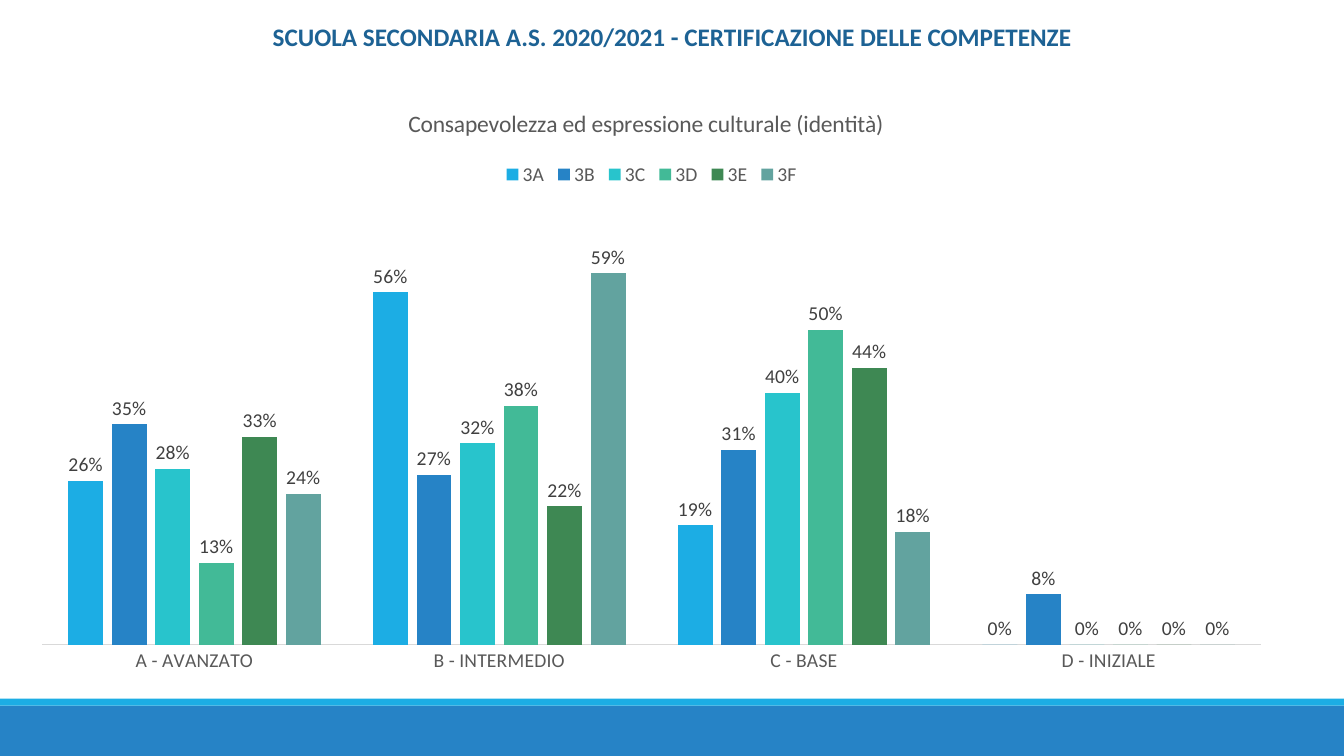
from pptx import Presentation
from pptx.chart.data import CategoryChartData
from pptx.dml.color import RGBColor
from pptx.enum.chart import XL_CHART_TYPE, XL_LABEL_POSITION, XL_LEGEND_POSITION, XL_TICK_MARK
from pptx.enum.shapes import MSO_SHAPE
from pptx.enum.text import PP_ALIGN
from pptx.oxml import parse_xml
from pptx.oxml.ns import nsdecls
from pptx.util import Pt

FONT = "Calibri"
COLORS = {
    "heading": "1D6294", "footer": "2683C6", "stripe": "1CADE4",
    "text": "595959", "label": "404040", "axis": "D9D9D9",
    "3A": "1CADE4", "3B": "2683C6", "3C": "28C4CC",
    "3D": "42BA97", "3E": "3E8853", "3F": "62A39F",
}
LEVELS = ["A - AVANZATO", "B - INTERMEDIO", "C - BASE", "D - INIZIALE"]
CLASSES = {
    "3A": (0.26, 0.56, 0.19, 0),
    "3B": (0.35, 0.27, 0.31, 0.08),
    "3C": (0.28, 0.32, 0.40, 0),
    "3D": (0.13, 0.38, 0.50, 0),
    "3E": (0.33, 0.22, 0.44, 0),
    "3F": (0.24, 0.59, 0.18, 0),
}


def rgb(name):
    return RGBColor.from_string(COLORS[name])


def style_font(font, size=14, color="text", bold=False):
    font.name = FONT
    font.size = Pt(size)
    font.bold = bold
    font.color.rgb = rgb(color)


def write_text(tf, text, align=PP_ALIGN.CENTER, **fmt):
    p = tf.paragraphs[0]
    p.alignment = align
    r = p.add_run()
    r.text = text
    style_font(r.font, **fmt)


def set_layout(element, index, inner=False, **box):
    for old in element.xpath("c:layout"):
        element.remove(old)
    target = '<c:layoutTarget val="inner"/>' if inner else ""
    modes = "".join(f'<c:{k}Mode val="edge"/>' for k in ("x", "y"))
    sizes = "".join(f'<c:{k} val="{v}"/>' for k, v in box.items())
    element.insert(index, parse_xml(
        f'<c:layout {nsdecls("c")}><c:manualLayout>{target}{modes}{sizes}'
        "</c:manualLayout></c:layout>"))


def add_heading(s, x, y, w, h):
    tf = s.shapes.add_textbox(Pt(x), Pt(y), Pt(w), Pt(h)).text_frame
    tf.word_wrap = True
    write_text(tf, "SCUOLA SECONDARIA A.S. 2020/2021 - CERTIFICAZIONE DELLE COMPETENZE",
               size=18, color="heading", bold=True)


def add_footer(s, x, y, w, h):
    stripe = 5
    for color, top, height in (("footer", y + stripe, h - stripe), ("stripe", y, stripe)):
        sp = s.shapes.add_shape(MSO_SHAPE.RECTANGLE, Pt(x), Pt(top), Pt(w), Pt(height))
        sp.shadow.inherit = False
        sp.fill.solid()
        sp.fill.fore_color.rgb = rgb(color)
        sp.line.fill.background()


def add_results_chart(s, x, y, w, h):
    data = CategoryChartData(number_format="0%")
    data.categories = LEVELS
    for name, values in CLASSES.items():
        data.add_series(name, values)
    chart = s.shapes.add_chart(XL_CHART_TYPE.COLUMN_CLUSTERED,
                               Pt(x), Pt(y), Pt(w), Pt(h), data).chart
    style_font(chart.font)

    chart.has_title = True
    title = chart.chart_title
    write_text(title.text_frame, "Consapevolezza ed espressione culturale (identità)", size=16.8)
    title.include_in_layout = False
    set_layout(title._element, 1, x=0.305, y=0.02)

    chart.has_legend = True
    legend = chart.legend
    legend.position = XL_LEGEND_POSITION.TOP
    legend.include_in_layout = False
    style_font(legend.font)
    set_layout(legend._element, 1, x=0.38, y=0.115, w=0.24, h=0.05)

    axis = chart.category_axis
    axis.major_tick_mark = XL_TICK_MARK.NONE
    axis.format.line.color.rgb = rgb("axis")
    axis.format.line.width = Pt(0.75)
    style_font(axis.tick_labels.font)
    values = chart.value_axis
    values.visible = False
    values.has_major_gridlines = False
    values.minimum_scale, values.maximum_scale = 0, 0.7

    plot = chart.plots[0]
    plot.vary_by_categories = False
    plot.gap_width, plot.overlap = 150, -25
    set_layout(plot._element.getparent(), 0, inner=True, x=0.02, y=0.19, w=0.96, h=0.74)
    for series in plot.series:
        series.format.fill.solid()
        series.format.fill.fore_color.rgb = rgb(series.name)
        labels = series.data_labels
        labels.show_value = True
        labels.number_format = "0%"
        labels.number_format_is_linked = False
        labels.position = XL_LABEL_POSITION.OUTSIDE_END
        style_font(labels.font, color="label")


def main():
    prs = Presentation()
    prs.slide_width, prs.slide_height = Pt(960), Pt(540)
    s = prs.slides.add_slide(prs.slide_layouts[6])
    add_footer(s, 0, 499, 960, 41)
    add_results_chart(s, 12, 65, 907, 425.5)
    add_heading(s, 170, 11.5, 620.5, 29)
    prs.save("out.pptx")


if __name__ == "__main__":
    main()
